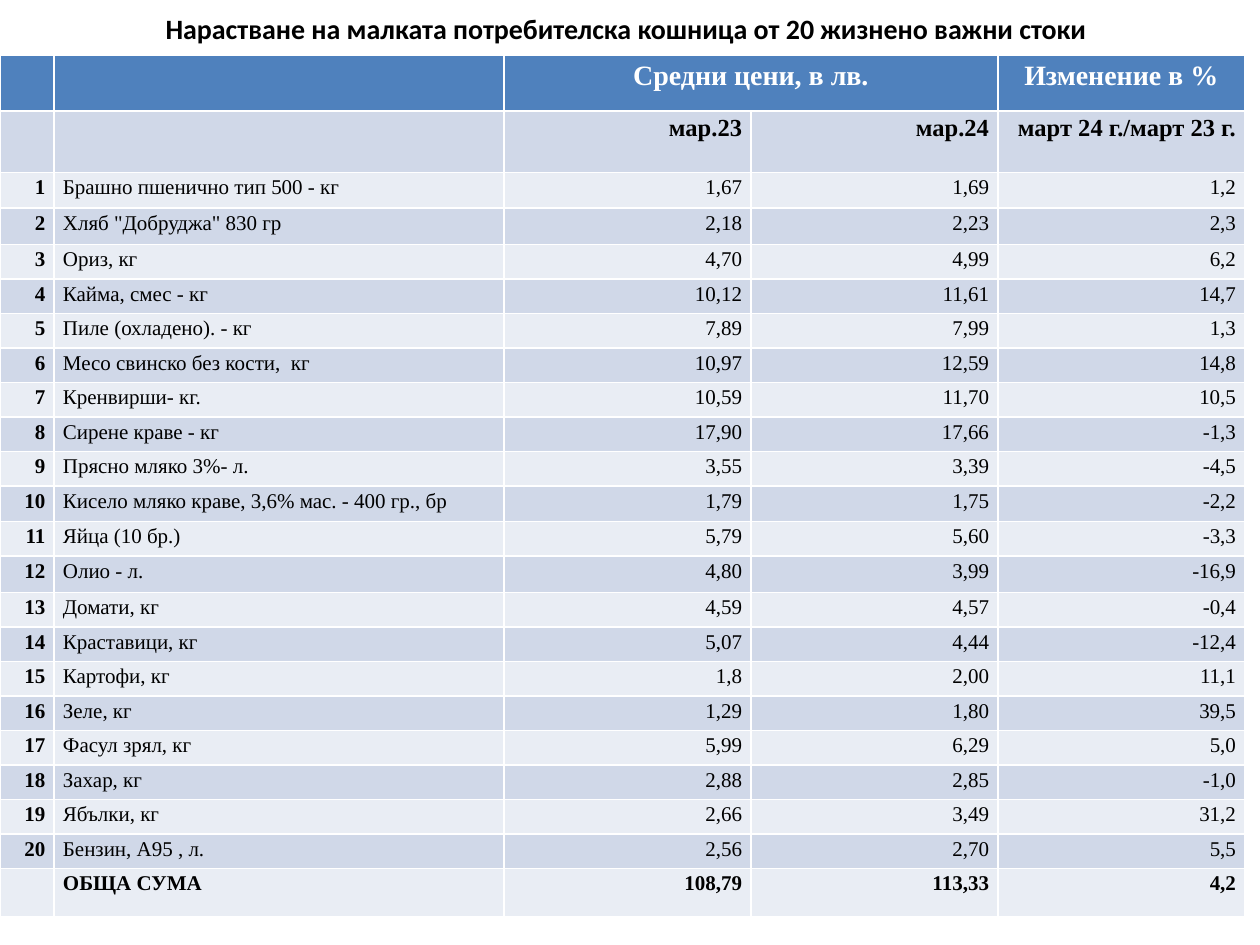
from pptx import Presentation
from pptx.dml.color import RGBColor
from pptx.enum.text import MSO_ANCHOR, PP_ALIGN
from pptx.util import Inches, Pt

BLACK = RGBColor(0x00, 0x00, 0x00)
WHITE = RGBColor(0xFF, 0xFF, 0xFF)
HEADER_BLUE = RGBColor(0x4F, 0x81, 0xBD)
BAND_DARK = RGBColor(0xD0, 0xD8, 0xE8)
BAND_LIGHT = RGBColor(0xE9, 0xED, 0xF4)

goods = [
    ("Брашно пшенично тип 500 - кг", "1,67", "1,69", "1,2"),
    ('Хляб "Добруджа" 830 гр', "2,18", "2,23", "2,3"),
    ("Ориз, кг", "4,70", "4,99", "6,2"),
    ("Кайма, смес - кг", "10,12", "11,61", "14,7"),
    ("Пиле (охладено). - кг", "7,89", "7,99", "1,3"),
    ("Месо свинско без кости,  кг", "10,97", "12,59", "14,8"),
    ("Кренвирши- кг.", "10,59", "11,70", "10,5"),
    ("Сирене краве - кг", "17,90", "17,66", "-1,3"),
    ("Прясно мляко 3%- л.", "3,55", "3,39", "-4,5"),
    ("Кисело мляко краве, 3,6% мас. - 400 гр., бр", "1,79", "1,75", "-2,2"),
    ("Яйца (10 бр.)", "5,79", "5,60", "-3,3"),
    ("Олио - л.", "4,80", "3,99", "-16,9"),
    ("Домати, кг", "4,59", "4,57", "-0,4"),
    ("Краставици, кг", "5,07", "4,44", "-12,4"),
    ("Картофи, кг", "1,8", "2,00", "11,1"),
    ("Зеле, кг", "1,29", "1,80", "39,5"),
    ("Фасул зрял, кг", "5,99", "6,29", "5,0"),
    ("Захар, кг", "2,88", "2,85", "-1,0"),
    ("Ябълки, кг", "2,66", "3,49", "31,2"),
    ("Бензин, А95 , л.", "2,56", "2,70", "5,5"),
]
rows = [
    ("", "", "Средни цени, в лв.", "", "Изменение в %"),
    ("", "", "мар.23", "мар.24", "март 24 г./март 23 г."),
    *[(str(number), *item) for number, item in enumerate(goods, 1)],
    ("", "ОБЩА СУМА", "108,79", "113,33", "4,2"),
]
last = len(rows) - 1
col_widths = [0.43, 3.57, 1.96, 1.96, 1.96]
special_heights = {0: 0.44, 1: 0.49, 2: 0.28, 3: 0.29, 11: 0.28, 13: 0.29, last: 0.38}
table_height = 6.84
row_height = (table_height - sum(special_heights.values())) / (len(rows) - len(special_heights))
font_sizes = {0: 16, 1: 14}

prs = Presentation()
prs.slide_width, prs.slide_height = Inches(10), Inches(7.5)
s = prs.slides.add_slide(prs.slide_layouts[5])

title = s.shapes.title
title.left, title.top = Inches(0.35), Inches(0.01)
title.width, title.height = Inches(9.24), Inches(0.43)
tf = title.text_frame
tf.vertical_anchor = MSO_ANCHOR.MIDDLE
tf.text = "Нарастване на малката потребителска кошница от 20 жизнено важни стоки"
p = tf.paragraphs[0]
p.alignment = PP_ALIGN.CENTER
p.font.name, p.font.size, p.font.bold = "Calibri", Pt(16), True
p.font.color.rgb = BLACK

table = s.shapes.add_table(
    len(rows), len(col_widths), 0, Inches(0.44), Inches(sum(col_widths)), Inches(table_height)
).table
for column, width in zip(table.columns, col_widths):
    column.width = Inches(width)
table.cell(0, 2).merge(table.cell(0, 3))

for i, row in enumerate(rows):
    table.rows[i].height = Inches(special_heights.get(i, row_height))
    for j, text in enumerate(row):
        cell = table.cell(i, j)
        cell.fill.solid()
        cell.fill.fore_color.rgb = HEADER_BLUE if i == 0 else BAND_DARK if i % 2 else BAND_LIGHT
        cell.margin_left = cell.margin_right = Inches(0.07)
        cell.margin_top = cell.margin_bottom = 0
        if not cell.is_spanned:
            cell.text = text
        p = cell.text_frame.paragraphs[0]
        p.line_spacing = 1.15
        p.alignment = PP_ALIGN.CENTER if i == 0 else PP_ALIGN.LEFT if j == 1 else PP_ALIGN.RIGHT
        p.font.name, p.font.size = "Times New Roman", Pt(font_sizes.get(i, 12))
        p.font.bold = i in (0, 1, last) or j == 0
        p.font.color.rgb = WHITE if i == 0 else BLACK

prs.save("out.pptx")
